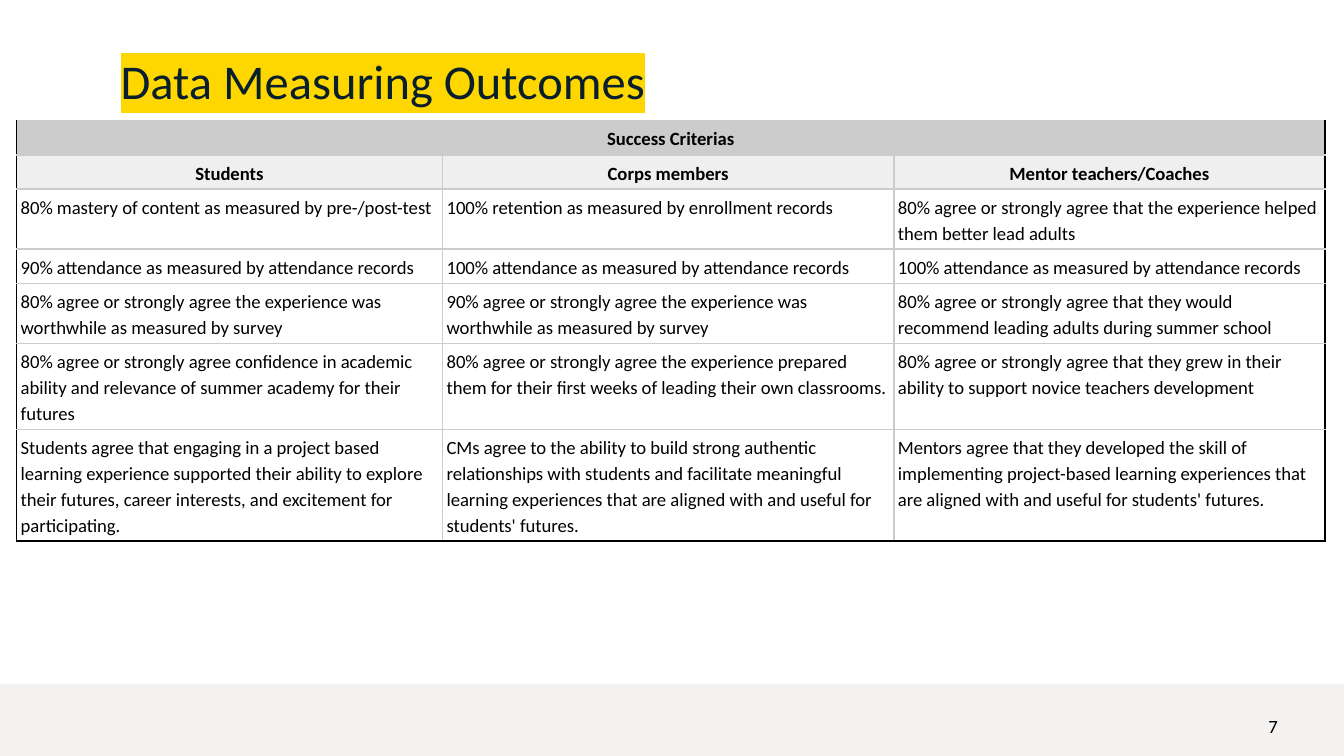
from lxml import etree
from pptx import Presentation
from pptx.dml.color import RGBColor
from pptx.enum.shapes import MSO_SHAPE
from pptx.enum.text import MSO_ANCHOR, PP_ALIGN
from pptx.oxml.ns import qn
from pptx.util import Cm, Pt

RECTANGLE = MSO_SHAPE.RECTANGLE
TOP, MIDDLE, BOTTOM = MSO_ANCHOR.TOP, MSO_ANCHOR.MIDDLE, MSO_ANCHOR.BOTTOM
LEFT, CENTER = PP_ALIGN.LEFT, PP_ALIGN.CENTER

BLACK = RGBColor(0x00, 0x00, 0x00)
NAVY = RGBColor(0x09, 0x1F, 0x2C)
GOLD = RGBColor(0xFF, 0xD7, 0x00)
GRAY = RGBColor(0xCC, 0xCC, 0xCC)
PALE_GRAY = RGBColor(0xEF, 0xEF, 0xEF)
FOOTER_GRAY = RGBColor(0xF3, 0xF2, 0xF1)
FONT = "Calibri"

TITLE = "Data Measuring Outcomes"
PAGE_NUMBER = "7"
ROWS = [
    ("Success Criterias", "", ""),
    ("Students", "Corps members", "Mentor teachers/Coaches"),
    ("80% mastery of content as measured by pre-/post-test",
     "100% retention as measured by enrollment records",
     "80% agree or strongly agree that the experience helped them better lead adults"),
    ("90% attendance as measured by attendance records",
     "100% attendance as measured by attendance records",
     "100% attendance as measured by attendance records"),
    ("80% agree or strongly agree the experience was worthwhile as measured by survey",
     "90% agree or strongly agree the experience was worthwhile as measured by survey",
     "80% agree or strongly agree that they would recommend leading adults during summer school"),
    ("80% agree or strongly agree confidence in academic ability and relevance of summer academy for their futures",
     "80% agree or strongly agree the experience prepared them for their first weeks of leading their own classrooms.",
     "80% agree or strongly agree that they grew in their ability to support novice teachers development"),
    ("Students agree that engaging in a project based learning experience supported their ability to explore their futures, career interests, and excitement for participating.",
     "CMs agree to the ability to build strong authentic relationships with students and facilitate meaningful learning experiences that are aligned with and useful for students' futures.",
     "Mentors agree that they developed the skill of implementing project-based learning experiences that are aligned with and useful for students' futures."),
]
HEADER_FILLS = [GRAY, PALE_GRAY]
COLUMN_WIDTHS = [8.05, 8.53, 8.15]
ROW_HEIGHTS = [0.63, 0.63, 1.12, 0.63, 1.12, 1.61, 2.11]


def add_span(para, text, size, color, bold=False, highlight=None):
    span = para.add_run()
    span.text = text
    span.font.size = Pt(size)
    span.font.bold = bold
    span.font.color.rgb = color
    if highlight is not None:
        mark = etree.SubElement(span.font._element, qn("a:highlight"))
        etree.SubElement(mark, qn("a:srgbClr"), val=str(highlight))
    span.font.name = FONT


def add_text(page, place, text, size, color, anchor, highlight=None):
    box = page.shapes.add_textbox(*map(Cm, place))
    frame = box.text_frame
    frame.word_wrap = True
    frame.vertical_anchor = anchor
    frame.margin_left = frame.margin_right = Cm(0.25)
    frame.margin_top = frame.margin_bottom = Cm(0.25)
    add_span(frame.paragraphs[0], text, size, color, highlight=highlight)


def set_borders(cell, colors):
    properties = cell._tc.get_or_add_tcPr()
    for side, color in zip("LRTB", colors):
        line = etree.SubElement(properties, qn(f"a:ln{side}"), w=str(Pt(1)))
        fill = etree.SubElement(line, qn("a:solidFill"))
        etree.SubElement(fill, qn("a:srgbClr"), val=str(color))


def fill_cell(cell, text, row, column):
    is_header = row < len(HEADER_FILLS)
    last_column = len(COLUMN_WIDTHS) - 1
    set_borders(cell, [
        BLACK if column == 0 else GRAY,
        BLACK if column == last_column or cell.is_merge_origin else GRAY,
        GRAY,
        BLACK if row == len(ROWS) - 1 else GRAY,
    ])
    if is_header:
        cell.fill.solid()
        cell.fill.fore_color.rgb = HEADER_FILLS[row]
    else:
        cell.fill.background()
    cell.margin_left = cell.margin_right = Cm(0.08)
    cell.margin_top = cell.margin_bottom = Cm(0.08)
    cell.vertical_anchor = BOTTOM if is_header else TOP
    if text:
        para = cell.text_frame.paragraphs[0]
        para.alignment = CENTER if is_header else LEFT
        para.line_spacing = 1.15
        add_span(para, text, 10, BLACK, bold=is_header)


def add_criteria(page):
    frame = page.shapes.add_table(
        len(ROWS), len(COLUMN_WIDTHS), Cm(0.31), Cm(2.28),
        Cm(sum(COLUMN_WIDTHS)), Cm(sum(ROW_HEIGHTS)))
    table = frame.table
    table.first_row = table.horz_banding = False
    for column, width in zip(table.columns, COLUMN_WIDTHS):
        column.width = Cm(width)
    for row, height in zip(table.rows, ROW_HEIGHTS):
        row.height = Cm(height)
    table.cell(0, 0).merge(table.cell(0, len(COLUMN_WIDTHS) - 1))
    for row, texts in enumerate(ROWS):
        for column, text in enumerate(texts):
            fill_cell(table.cell(row, column), text, row, column)


def main():
    deck = Presentation()
    deck.slide_width, deck.slide_height = Cm(25.4), Cm(14.29)
    page = deck.slides.add_slide(deck.slide_layouts[6])
    footer = page.shapes.add_shape(RECTANGLE, 0, Cm(12.93), Cm(25.4), Cm(1.36))
    footer.shadow.inherit = False
    footer.fill.solid()
    footer.fill.fore_color.rgb = FOOTER_GRAY
    footer.line.fill.background()
    add_text(page, (2.03, 0.72, 21.36, 1.5), TITLE, 26, NAVY, TOP, GOLD)
    add_text(page, (23.72, 13.18, 1.52, 1.09), PAGE_NUMBER, 10, BLACK, MIDDLE)
    add_criteria(page)
    deck.save("out.pptx")


if __name__ == "__main__":
    main()
